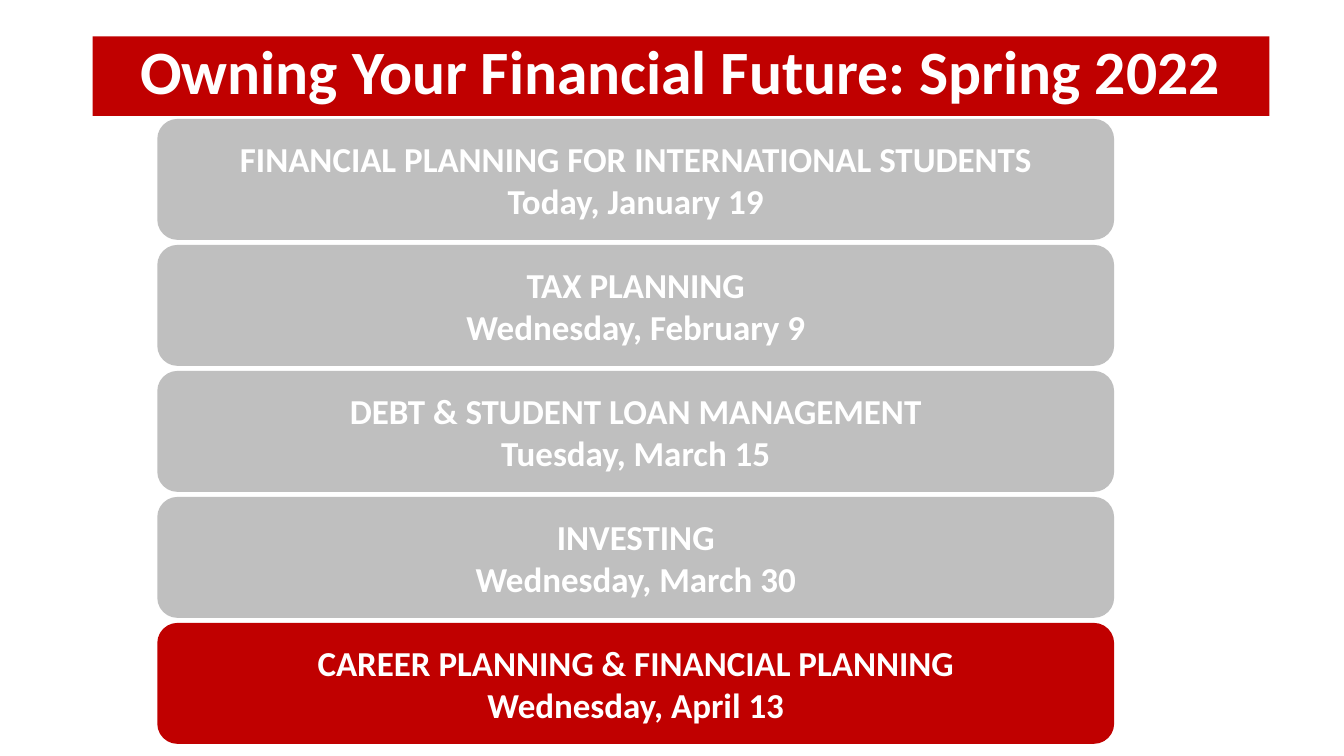
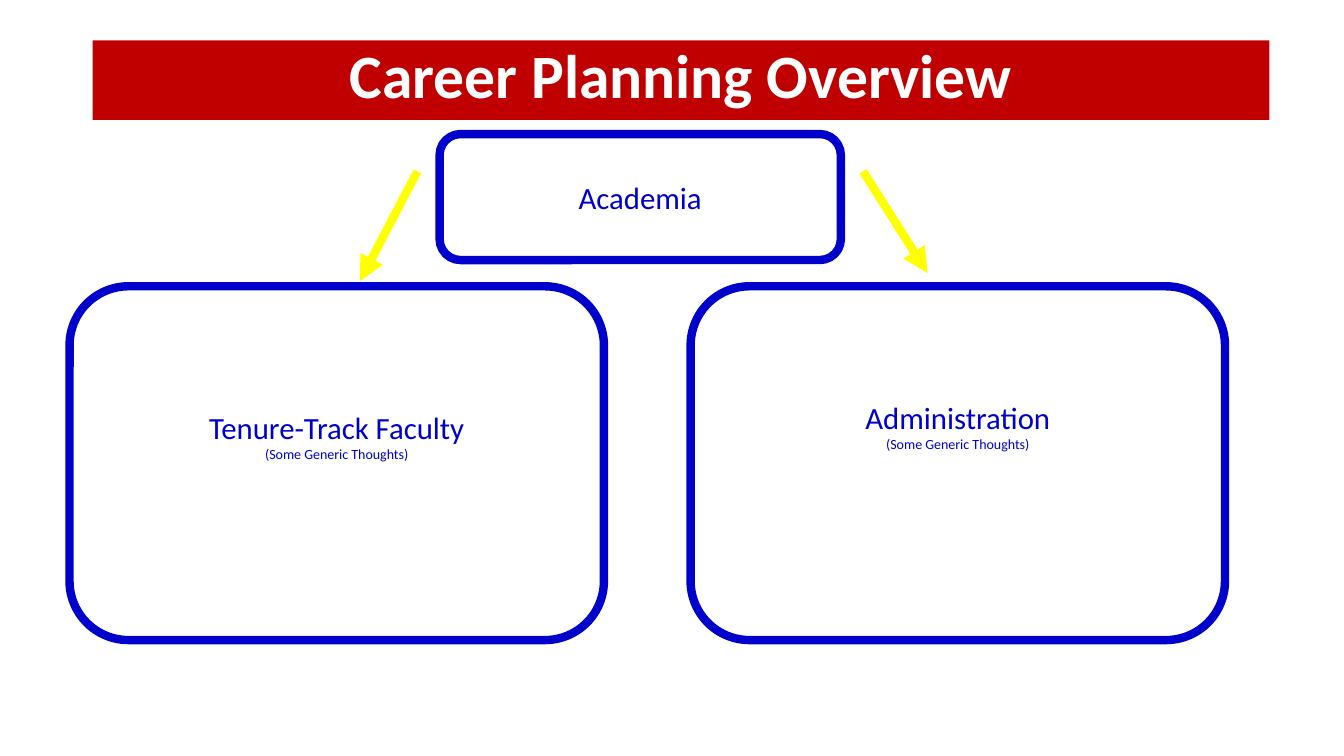
"""Build two slides: the seminar schedule and the career planning overview."""
from lxml.etree import SubElement
from pptx import Presentation
from pptx.dml.color import RGBColor
from pptx.enum.shapes import MSO_CONNECTOR, MSO_SHAPE
from pptx.enum.text import MSO_ANCHOR, PP_ALIGN
from pptx.oxml.ns import qn
from pptx.util import Inches, Pt

RED = RGBColor(0xC0, 0x00, 0x00)
GRAY = RGBColor(0xBF, 0xBF, 0xBF)
BLUE = RGBColor(0x00, 0x00, 0xCC)
YELLOW = RGBColor(0xFF, 0xFF, 0x00)
WHITE = RGBColor(0xFF, 0xFF, 0xFF)

SESSIONS = [
    ("FINANCIAL PLANNING FOR INTERNATIONAL STUDENTS", "Today, January 19"),
    ("TAX PLANNING", "Wednesday, February 9"),
    ("DEBT & STUDENT LOAN MANAGEMENT", "Tuesday, March 15"),
    ("INVESTING", "Wednesday, March 30"),
    ("CAREER PLANNING & FINANCIAL PLANNING", "Wednesday, April 13"),
]
NOTE = "(Some Generic Thoughts)"


class Deck:
    FONT = "Calibri"
    STROKE = Pt(6)

    def __init__(self):
        self.file = Presentation()
        self.file.slide_width = Inches(13.33)
        self.file.slide_height = Inches(7.5)
        self.slide = None

    def start(self, title, top):
        self.slide = self.file.slides.add_slide(self.file.slide_layouts[6])
        band = self.shape(MSO_SHAPE.RECTANGLE, (0.92, top, 11.67, 0.79), RED)
        self.label(band, [(title, 44)], WHITE, bold=True)
        band.text_frame.vertical_anchor = MSO_ANCHOR.TOP
        band.text_frame.paragraphs[0].line_spacing = 0.9

    def shape(self, kind, place, fill):
        shape = self.slide.shapes.add_shape(kind, *map(Inches, place))
        shape.shadow.inherit = False
        shape.fill.solid()
        shape.fill.fore_color.rgb = fill
        shape.line.fill.background()
        return shape

    def label(self, shape, lines, color, bold=False):
        frame = shape.text_frame
        frame.word_wrap = True
        frame.vertical_anchor = MSO_ANCHOR.MIDDLE
        for index, (text, size) in enumerate(lines):
            para = frame.paragraphs[0] if index == 0 else frame.add_paragraph()
            para.alignment = PP_ALIGN.CENTER
            run = para.add_run()
            run.text = text
            style = {"name": self.FONT, "size": Pt(size), "bold": bold}
            for key, value in style.items():
                setattr(run.font, key, value)
            run.font.color.rgb = color

    def card(self, place, lines, fill):
        card = self.shape(MSO_SHAPE.ROUNDED_RECTANGLE, place, fill)
        self.label(card, [(text, 25) for text in lines], WHITE, bold=True)

    def box(self, place, lines, bottom=0.05):
        box = self.shape(MSO_SHAPE.ROUNDED_RECTANGLE, place, WHITE)
        box.line.color.rgb = BLUE
        box.line.width = self.STROKE
        self.label(box, lines, BLUE)
        box.text_frame.margin_bottom = Inches(bottom)

    def arrow(self, *ends):
        arrow = self.slide.shapes.add_connector(
            MSO_CONNECTOR.STRAIGHT, *map(Inches, ends))
        arrow.line.color.rgb = YELLOW
        arrow.line.width = self.STROKE
        props = arrow._element.spPr
        SubElement(props.find(qn("a:ln")), qn("a:tailEnd"), type="triangle")
        SubElement(props, qn("a:effectLst"))

    def save(self):
        self.file.save("out.pptx")


def main():
    deck = Deck()

    deck.start("Owning Your Financial Future: Spring 2022", 0.36)
    for index, lines in enumerate(SESSIONS):
        fill = RED if lines is SESSIONS[-1] else GRAY
        deck.card((1.56, 1.18 + index * 1.25, 9.49, 1.2), lines, fill)

    deck.start("Career Planning Overview", 0.4)
    deck.box((4.36, 1.33, 3.98, 1.25), [("Academia", 22)])
    tracks = [("Tenure-Track Faculty", 0.69, 0.59), ("Administration", 6.85, 0.8)]
    for name, left, bottom in tracks:
        deck.box((left, 2.84, 5.3, 3.51), [(name, 22), (NOTE, 10)], bottom)
    deck.arrow(4.14, 1.7, 3.57, 2.79)
    deck.arrow(8.56, 1.7, 9.2, 2.71)

    deck.save()


if __name__ == "__main__":
    main()
